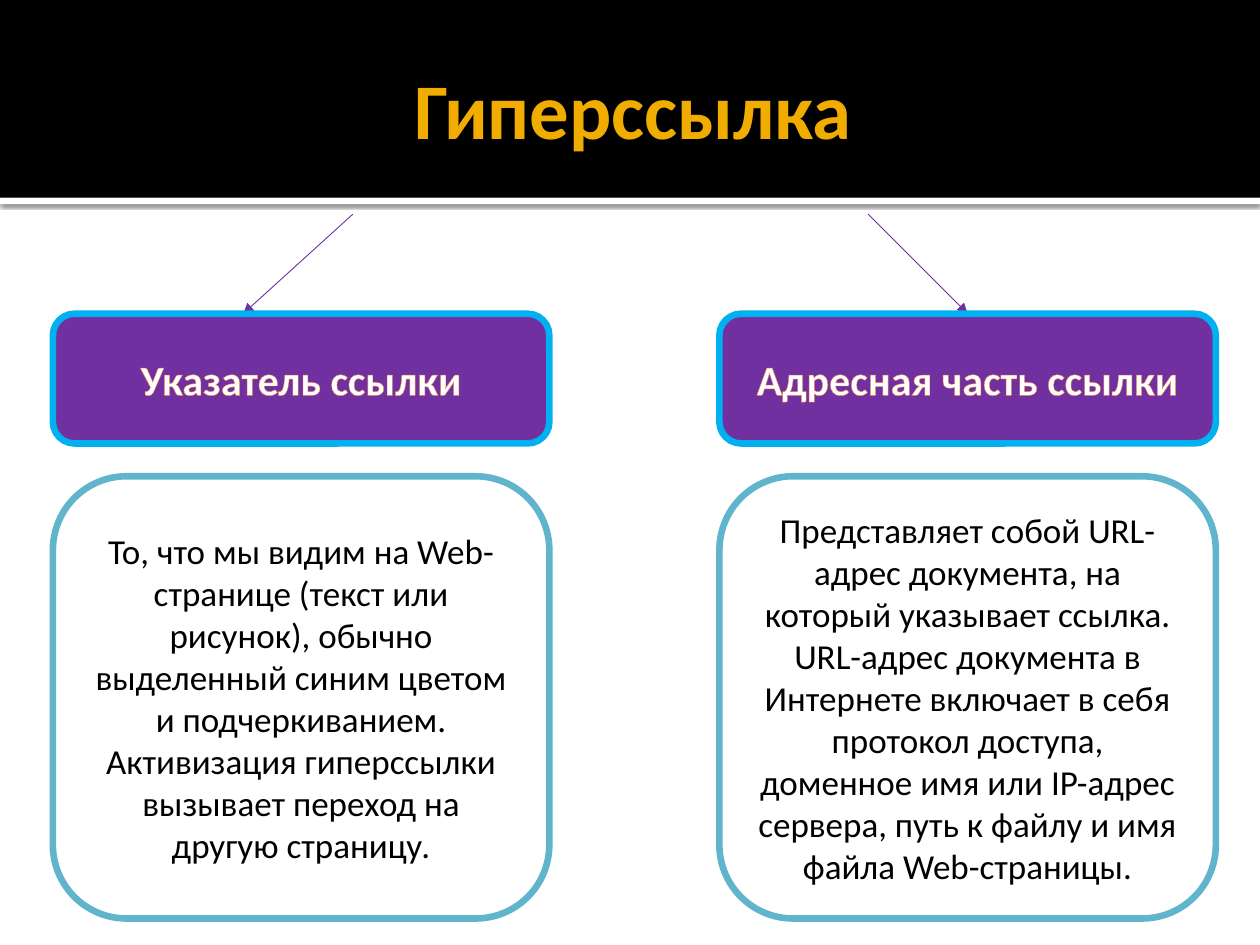
from dataclasses import dataclass
from typing import Any, Optional

from lxml import etree
from pptx import Presentation
from pptx.dml.color import RGBColor
from pptx.enum.shapes import MSO_CONNECTOR, MSO_SHAPE
from pptx.enum.text import MSO_ANCHOR, PP_ALIGN
from pptx.oxml import parse_xml
from pptx.oxml.ns import nsdecls, qn
from pptx.util import Pt

RECTANGLE = MSO_SHAPE.RECTANGLE
ROUNDED = MSO_SHAPE.ROUNDED_RECTANGLE
STRAIGHT = MSO_CONNECTOR.STRAIGHT
MIDDLE = MSO_ANCHOR.MIDDLE
CENTER = PP_ALIGN.CENTER
TOP_SIDE = 0
EMU_PER_PX = 9144


@dataclass(frozen=True)
class Theme:
    font: str = "Calibri"
    white: str = "FFFFFF"
    black: str = "000000"
    gold: str = "F0AD00"
    purple: str = "7030A0"
    bright_blue: str = "00B0F0"
    soft_blue: str = "60B5CC"
    orange: str = "E88651"
    title_size: int = 45
    heading_size: int = 24
    body_size: int = 20
    border: float = 3.78
    arrow: float = 0.5
    text_outline: float = 0.8


@dataclass(frozen=True)
class Box:
    left: int
    top: int
    width: int
    height: int


@dataclass(frozen=True)
class TextStyle:
    size: int
    color: str
    bold: bool = False
    outline: Optional[str] = None


@dataclass(frozen=True)
class CardStyle:
    fill: str
    border: str
    text: TextStyle


@dataclass(frozen=True)
class Column:
    left: int
    heading: str
    paragraphs: tuple[str, ...]
    arrow_start: int
    arrow_end: int


THEME = Theme()
TITLE = TextStyle(THEME.title_size, THEME.gold, True)
HEADING = CardStyle(THEME.purple, THEME.bright_blue,
                    TextStyle(THEME.heading_size, THEME.white, True, THEME.orange))
BODY = CardStyle(THEME.white, THEME.soft_blue, TextStyle(THEME.body_size, THEME.black))

SLIDE = Box(0, 0, 1000, 750)
BANNER = Box(0, 0, 1000, 157)
STRIPE = Box(0, 157, 1000, 5)
TITLE_BOX = Box(50, 17, 900, 137)
ARROW_TOP = 170
CARD_WIDTH = 394
HEADING_TOP, HEADING_HEIGHT = 249, 103
BODY_TOP, BODY_HEIGHT = 378, 351

COLUMNS = (
    Column(42, "Указатель ссылки", (
        "То, что мы видим на Web-странице (текст или рисунок), обычно выделенный "
        "синим цветом и подчеркиванием. Активизация гиперссылки вызывает переход "
        "на другую страницу.",
    ), 280, 193),
    Column(571, "Адресная часть ссылки", (
        "Представляет собой URL-адрес документа, на который указывает ссылка.",
        "URL-адрес документа в Интернете включает в себя протокол доступа, доменное "
        "имя или IP-адрес сервера, путь к файлу и имя файла Web-страницы.",
    ), 689, 768),
)


def px(length: int) -> int:
    return length * EMU_PER_PX


def place(box: Box) -> tuple[int, int, int, int]:
    return px(box.left), px(box.top), px(box.width), px(box.height)


def rgb(color: str) -> RGBColor:
    return RGBColor.from_string(color)


def set_attributes(target: Any, values: dict[str, Any]) -> None:
    for name, value in values.items():
        setattr(target, name, value)


def write_text(shape: Any, paragraphs: tuple[str, ...], style: TextStyle) -> None:
    frame = shape.text_frame
    set_attributes(frame, {"word_wrap": True, "vertical_anchor": MIDDLE})
    for index, text in enumerate(paragraphs):
        paragraph = frame.add_paragraph() if index else frame.paragraphs[0]
        paragraph.alignment = CENTER
        run = paragraph.add_run()
        run.text = text
        set_attributes(run.font, {"name": THEME.font, "size": Pt(style.size),
                                  "bold": style.bold})
        run.font.color.rgb = rgb(style.color)
        if style.outline:
            run.font._element.insert(0, parse_xml(
                f'<a:ln {nsdecls("a")} w="{Pt(THEME.text_outline)}"><a:solidFill>'
                f'<a:srgbClr val="{style.outline}"/></a:solidFill></a:ln>'))


def add_block(slide: Any, kind: Any, box: Box, fill: str) -> Any:
    shape = slide.shapes.add_shape(kind, *place(box))
    shape.shadow.inherit = False
    shape.fill.solid()
    shape.fill.fore_color.rgb = rgb(fill)
    shape.line.fill.background()
    return shape


def add_stripe(slide: Any) -> None:
    stripe = add_block(slide, RECTANGLE, STRIPE, THEME.white)
    effects = stripe._element.spPr.find(qn("a:effectLst"))
    effects.append(parse_xml(
        f'<a:outerShdw {nsdecls("a")} blurRad="{Pt(2.5)}" dist="{Pt(0.8)}" '
        f'dir="5400000" algn="tl" rotWithShape="0"><a:srgbClr val="{THEME.black}">'
        '<a:alpha val="60000"/></a:srgbClr></a:outerShdw>'))


def add_title(slide: Any, text: str) -> None:
    title = slide.shapes.add_textbox(*place(TITLE_BOX))
    set_attributes(title.text_frame, {"margin_left": px(10), "margin_right": px(5),
                                      "margin_top": px(5), "margin_bottom": px(5)})
    write_text(title, (text,), TITLE)


def add_card(slide: Any, box: Box, paragraphs: tuple[str, ...], style: CardStyle) -> Any:
    card = add_block(slide, ROUNDED, box, style.fill)
    card.line.color.rgb = rgb(style.border)
    card.line.width = Pt(THEME.border)
    write_text(card, paragraphs, style.text)
    return card


def add_arrow(slide: Any, column: Column) -> Any:
    arrow = slide.shapes.add_connector(STRAIGHT, px(column.arrow_start), px(ARROW_TOP),
                                       px(column.arrow_end), px(HEADING_TOP))
    arrow.line.color.rgb = rgb(THEME.purple)
    arrow.line.width = Pt(THEME.arrow)
    etree.SubElement(arrow.line._get_or_add_ln(), qn("a:tailEnd"), type="triangle")
    etree.SubElement(arrow._element.spPr, qn("a:effectLst"))
    return arrow


def add_column(slide: Any, column: Column) -> None:
    arrow = add_arrow(slide, column)
    heading_box = Box(column.left, HEADING_TOP, CARD_WIDTH, HEADING_HEIGHT)
    heading = add_card(slide, heading_box, (column.heading,), HEADING)
    if column.arrow_end == column.left + CARD_WIDTH // 2:
        arrow.end_connect(heading, TOP_SIDE)
    body_box = Box(column.left, BODY_TOP, CARD_WIDTH, BODY_HEIGHT)
    add_card(slide, body_box, column.paragraphs, BODY)


def main() -> None:
    presentation = Presentation()
    set_attributes(presentation, {"slide_width": px(SLIDE.width),
                                  "slide_height": px(SLIDE.height)})
    slide = presentation.slides.add_slide(presentation.slide_layouts[6])
    add_stripe(slide)
    add_block(slide, RECTANGLE, BANNER, THEME.black)
    add_title(slide, "Гиперссылка")
    for column in COLUMNS:
        add_column(slide, column)
    presentation.save("out.pptx")


if __name__ == "__main__":
    main()
